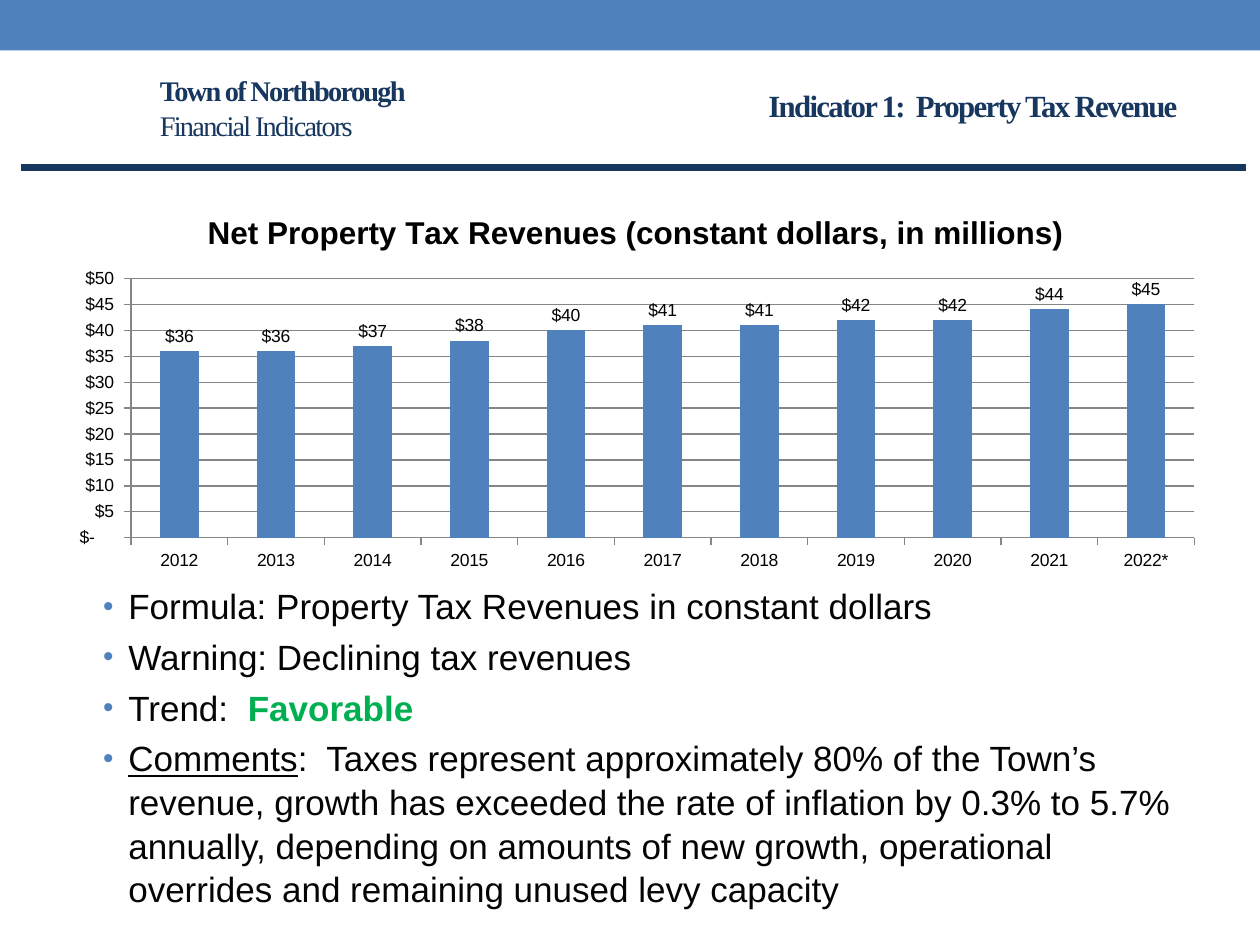
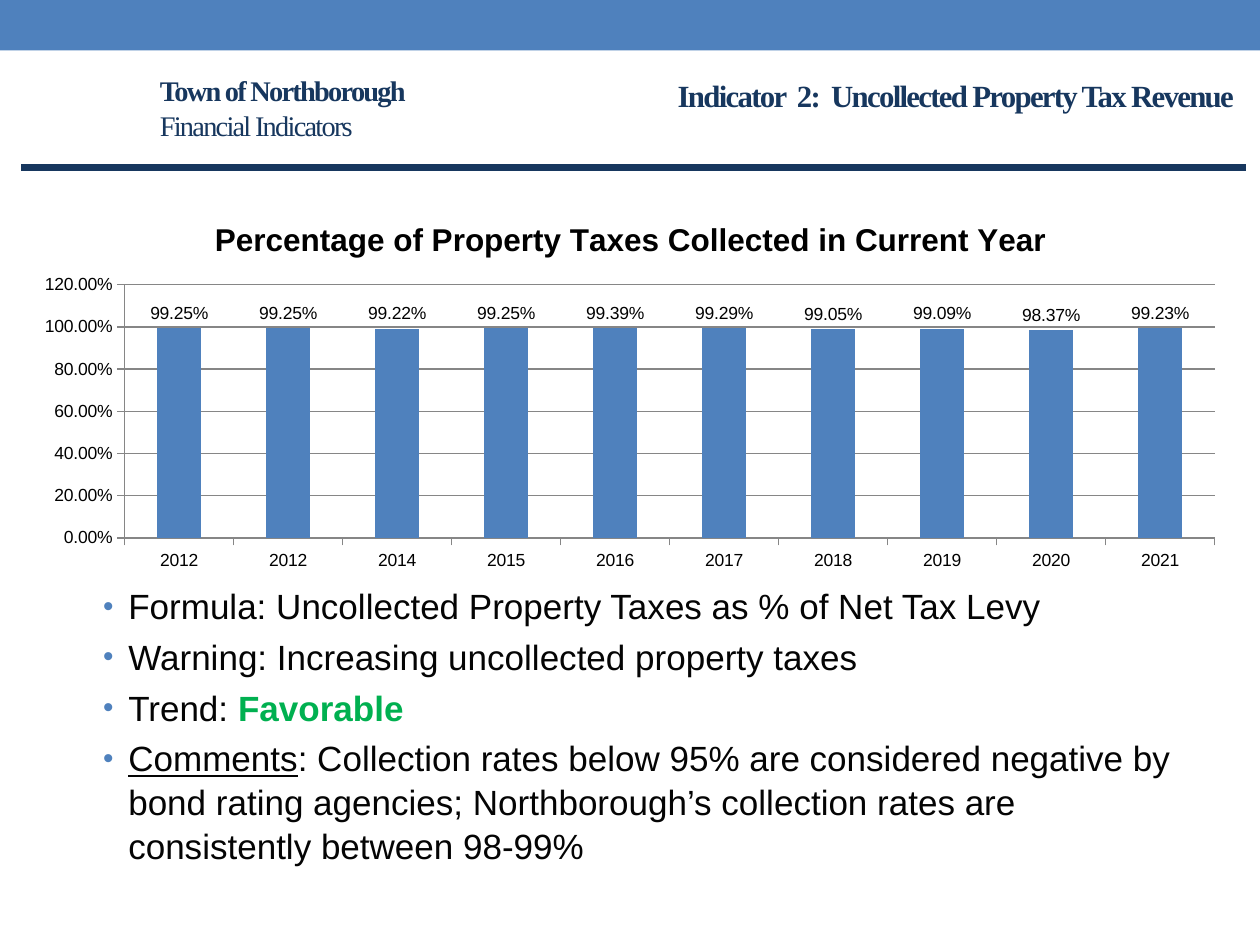
from lxml import etree
from pptx import Presentation
from pptx.chart.data import CategoryChartData
from pptx.dml.color import RGBColor
from pptx.enum import chart as charts, shapes, text
from pptx.oxml import parse_xml
from pptx.oxml.ns import nsdecls, qn
from pptx.util import Inches, Pt

BLUE, NAVY, GREEN = "4F81BD", "17375E", "00B050"
INK, BLACK, GRID = "040404", "000000", "868686"
SERIF, SANS = "Times New Roman", "Arial"
DOLLARS = r'_("$"* #,##0_);_("$"* \(#,##0\);_("$"* "-"??_);_(@_)'
PERCENT = "0.00%"
TITLE_BOX = (1.17, 0.56, 2.2, 0.58)
BODY_BOX = (0.42, 4.58, 9, 2.42)

INDICATORS = [
    {
        "heading": "Indicator 1:  Property Tax Revenue",
        "heading_box": (6, 0.57, 3.89, 0.51),
        "align": text.PP_ALIGN.LEFT,
        "chart_title": "Net Property Tax Revenues (constant dollars, in millions)",
        "chart_box": (0.42, 1.52, 9.25, 3.06),
        "plot_box": (0.62, 0.69, 8.44, 2.06),
        "years": [str(year) for year in range(2012, 2022)] + ["2022*"],
        "values": [36, 36, 37, 38, 40, 41, 41, 42, 42, 44, 45],
        "axis": (50, 5, DOLLARS),
        "bullets": [
            ["Formula: Property Tax Revenues in constant dollars"],
            ["Warning: Declining tax revenues"],
            ["Trend:  ", "Favorable"],
            ["Comments", ":  Taxes represent approximately 80% of the Town’s revenue, "
             "growth has exceeded the rate of inflation by 0.3% to 5.7% annually, "
             "depending on amounts of new growth, operational overrides and "
             "remaining unused levy capacity"],
        ],
    },
    {
        "heading": "Indicator  2:  Uncollected Property Tax Revenue",
        "heading_box": (5.03, 0.42, 4.86, 0.66),
        "align": text.PP_ALIGN.RIGHT,
        "chart_title": "Percentage of Property Taxes Collected in Current Year",
        "chart_box": (0.17, 1.58, 9.67, 3),
        "plot_box": (0.82, 0.68, 8.65, 2.01),
        "years": ["2012", "2012"] + [str(year) for year in range(2014, 2022)],
        "values": [0.9925, 0.9925, 0.9922, 0.9925, 0.9939,
                   0.9929, 0.9905, 0.9909, 0.9837, 0.9923],
        "axis": (1.2, 0.2, PERCENT),
        "bullets": [
            ["Formula: Uncollected Property Taxes as % of Net Tax Levy"],
            ["Warning: Increasing uncollected property taxes"],
            ["Trend: ", "Favorable"],
            ["Comments", ": Collection rates below 95% are considered negative by bond "
             "rating agencies; Northborough’s collection rates are consistently "
             "between 98-99%"],
        ],
    },
]


def rgb(value):
    """Turn a hex string into a colour."""
    return RGBColor.from_string(value)


def inches(box):
    """Convert a box in inches to lengths."""
    return [Inches(length) for length in box]


def style_font(font, name, size, color, bold=False):
    """Set the main properties of a font."""
    font.name, font.size, font.bold = name, Pt(size), bold
    font.color.rgb = rgb(color)


def add_text(slide, box, anchor):
    """Add a wrapping text box and return its text frame."""
    frame = slide.shapes.add_textbox(*inches(box)).text_frame
    frame.word_wrap = True
    frame.vertical_anchor = anchor
    return frame


def add_heading(slide, box, words, size, align=text.PP_ALIGN.LEFT):
    """Add a tightly spaced serif heading whose first line is bold."""
    paragraph = add_text(slide, box, text.MSO_ANCHOR.MIDDLE).paragraphs[0]
    paragraph.text = words
    paragraph.alignment = align
    paragraph.line_spacing = 1.04
    for index, run in enumerate(paragraph.runs):
        style_font(run.font, SERIF, size, NAVY, bold=index == 0)
        run.font._element.set("spc", "-100")


def add_header(slide, indicator):
    """Add the top band, both headings and the rule."""
    band = slide.shapes.add_shape(shapes.MSO_SHAPE.RECTANGLE, *inches((0, 0, 10, 0.4)))
    band.shadow.inherit = False
    band.fill.solid()
    band.fill.fore_color.rgb = rgb(BLUE)
    band.line.fill.background()
    add_heading(slide, TITLE_BOX, "Town of Northborough\vFinancial Indicators", 16.2)
    add_heading(slide, indicator["heading_box"], indicator["heading"], 17.6, indicator["align"])
    rule = slide.shapes.add_connector(
        shapes.MSO_CONNECTOR.STRAIGHT, *inches((0.17, 1.33, 9.89, 1.33)))
    rule.line.color.rgb = rgb(NAVY)
    rule.line.width = Pt(4.25)
    etree.SubElement(rule._element.spPr, qn("a:effectLst"))


def add_bullet_mark(paragraph):
    """Give a paragraph a hanging blue bullet."""
    properties = paragraph._p.get_or_add_pPr()
    properties.set("marL", str(Inches(0.5)))
    properties.set("indent", str(Inches(-0.2)))
    color = etree.SubElement(properties, qn("a:buClr"))
    etree.SubElement(color, qn("a:srgbClr"), val=BLUE)
    etree.SubElement(properties, qn("a:buSzPct"), val="85000")
    etree.SubElement(properties, qn("a:buFont"), typeface=SANS)
    etree.SubElement(properties, qn("a:buChar"), char="•")


def add_bullets(slide, box, bullets):
    """Add the bullet list with its trend and comment highlights."""
    frame = add_text(slide, box, text.MSO_ANCHOR.TOP)
    for index, parts in enumerate(bullets):
        paragraph = frame.add_paragraph() if index else frame.paragraphs[0]
        paragraph.level = 1
        paragraph.line_spacing = 1.04
        paragraph.space_before = Pt(4)
        add_bullet_mark(paragraph)
        for part in parts:
            run = paragraph.add_run()
            run.text = part
            favorable = part == "Favorable"
            style_font(run.font, SANS, 20, GREEN if favorable else INK, favorable)
            run.font.underline = part == "Comments"


def place_plot(chart, chart_box, plot_box):
    """Fix the inner plot area, given in inches from the chart's corner."""
    width, height = chart_box[2:]
    fractions = [length / side for length, side in zip(plot_box, (width, height) * 2)]
    values = "".join(f'<c:{name} val="{fraction:.4f}"/>'
                     for name, fraction in zip("xywh", fractions))
    layout = parse_xml(
        f'<c:layout {nsdecls("c")}><c:manualLayout><c:layoutTarget val="inner"/>'
        f'<c:xMode val="edge"/><c:yMode val="edge"/>{values}</c:manualLayout></c:layout>')
    plot_area = chart._chartSpace.xpath("c:chart/c:plotArea")[0]
    for old_layout in plot_area.findall(qn("c:layout")):
        plot_area.remove(old_layout)
    plot_area.insert(0, layout)


def add_column_chart(slide, box, indicator):
    """Add the titled column chart of one indicator."""
    maximum, step, number_format = indicator["axis"]
    data = CategoryChartData(number_format=number_format)
    data.categories = indicator["years"]
    data.add_series("Series 1", indicator["values"])
    chart = slide.shapes.add_chart(
        charts.XL_CHART_TYPE.COLUMN_CLUSTERED, *inches(box), data).chart
    style_font(chart.font, SANS, 10, BLACK)
    chart.has_legend = False
    chart.has_title = True
    title = chart.chart_title
    title.include_in_layout = False
    title.text_frame.text = indicator["chart_title"]
    style_font(title.text_frame.paragraphs[0].runs[0].font, SANS, 18, BLACK, True)

    value_axis = chart.value_axis
    value_axis.minimum_scale, value_axis.maximum_scale = 0, maximum
    value_axis.major_unit = step
    value_axis.has_major_gridlines = True
    value_axis.tick_labels.number_format = number_format
    value_axis.tick_labels.number_format_is_linked = False
    for axis in (value_axis, chart.category_axis):
        axis.major_tick_mark = charts.XL_TICK_MARK.OUTSIDE
        axis.minor_tick_mark = charts.XL_TICK_MARK.NONE
    for item in (value_axis, chart.category_axis, value_axis.major_gridlines):
        item.format.line.color.rgb = rgb(GRID)
        item.format.line.width = Pt(0.75)

    plot = chart.plots[0]
    plot.gap_width = 150
    plot.vary_by_categories = False
    plot.has_data_labels = True
    labels = plot.data_labels
    labels.show_value = True
    labels.position = charts.XL_LABEL_POSITION.OUTSIDE_END
    labels.number_format = number_format
    labels.number_format_is_linked = False
    fill = plot.series[0].format.fill
    fill.solid()
    fill.fore_color.rgb = rgb(BLUE)
    place_plot(chart, box, indicator["plot_box"])


def add_indicator_slide(presentation, indicator):
    """Add one slide with header, chart and bullets."""
    slide = presentation.slides.add_slide(presentation.slide_layouts[6])
    add_header(slide, indicator)
    add_bullets(slide, BODY_BOX, indicator["bullets"])
    add_column_chart(slide, indicator["chart_box"], indicator)


def main():
    """Build and save the presentation."""
    presentation = Presentation()
    presentation.slide_width, presentation.slide_height = Inches(10), Inches(7.5)
    for indicator in INDICATORS:
        add_indicator_slide(presentation, indicator)
    presentation.save("out.pptx")


if __name__ == "__main__":
    main()
